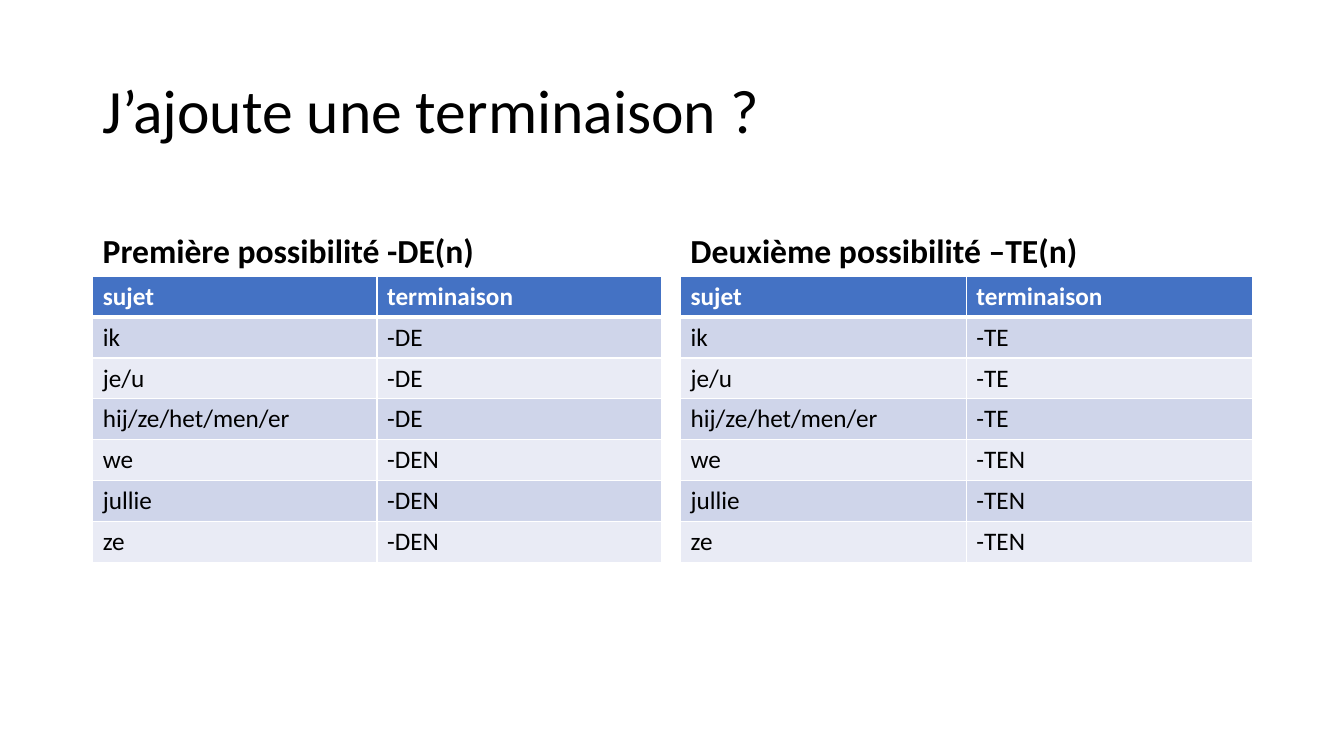
import pptx
import pptx.util
import pptx.dml.color
import pptx.enum.text
import pptx.oxml
import pptx.oxml.ns
from pptx.util import Inches

WHITE, BLACK, HEADER = "FFFFFF", "000000", "4472C4"
BANDS = ["E9EBF5", "CFD5EA"]
ROW_H = 0.4057
SUBJECTS = ["ik", "je/u", "hij/ze/het/men/er", "we", "jullie", "ze"]


def style_text(tf, size, color, bold=False):
    for r in tf.paragraphs[0].runs:
        r.font.name = "Calibri"
        r.font.size = pptx.util.Pt(size)
        r.font.bold = bold
        r.font.color.rgb = pptx.dml.color.RGBColor.from_string(color)


def add_text(text, left, top, width, height, size, anchor, bold=False):
    tf = s.shapes.add_textbox(Inches(left), Inches(top), Inches(width), Inches(height)).text_frame
    tf.word_wrap = True
    tf.vertical_anchor = anchor
    tf.text = text
    tf.paragraphs[0].line_spacing = 0.9
    style_text(tf, size, BLACK, bold)


prs = pptx.Presentation()
prs.slide_width, prs.slide_height = Inches(13.33), Inches(7.5)
s = prs.slides.add_slide(prs.slide_layouts[6])

# Title
add_text("J’ajoute une terminaison ?", 0.92, 0.4, 11.5, 1.45, 44,
         pptx.enum.text.MSO_ANCHOR.MIDDLE)

# Two possibilities: heading above a table of endings
for heading, ending, left, width in [
    ("Première possibilité -DE(n)", "-DE", 0.92, 5.64),
    ("Deuxième possibilité –TE(n)", "-TE", 6.75, 5.67),
]:
    add_text(heading, left, 1.84, width, 0.9, 24, pptx.enum.text.MSO_ANCHOR.BOTTOM, True)

    # Singular subjects take the bare ending, plural ones add N
    rows = [("sujet", "terminaison")]
    rows += [(subject, ending + ("N" if i >= 3 else "")) for i, subject in enumerate(SUBJECTS)]
    table = s.shapes.add_table(len(rows), 2, Inches(left), Inches(2.74),
                               Inches(width), Inches(ROW_H * len(rows))).table
    for i, row in enumerate(rows):
        table.rows[i].height = Inches(ROW_H)
        for j, text in enumerate(row):
            cell = table.cell(i, j)
            cell.text_frame.text = text
            style_text(cell.text_frame, 18, BLACK if i else WHITE, i == 0)

            # White borders, thicker under the header
            thick = {0: "lnB", 1: "lnT"}.get(i)
            for side in ["lnL", "lnR", "lnT", "lnB"]:
                line_w = pptx.util.Pt(3 if side == thick else 1)
                cell._tc.get_or_add_tcPr().append(pptx.oxml.parse_xml(
                    f'<a:{side} {pptx.oxml.ns.nsdecls("a")} w="{line_w}"><a:solidFill>'
                    f'<a:srgbClr val="{WHITE}"/></a:solidFill></a:{side}>'))
            cell.fill.solid()
            cell.fill.fore_color.rgb = pptx.dml.color.RGBColor.from_string(
                BANDS[i % 2] if i else HEADER)

prs.save("out.pptx")
